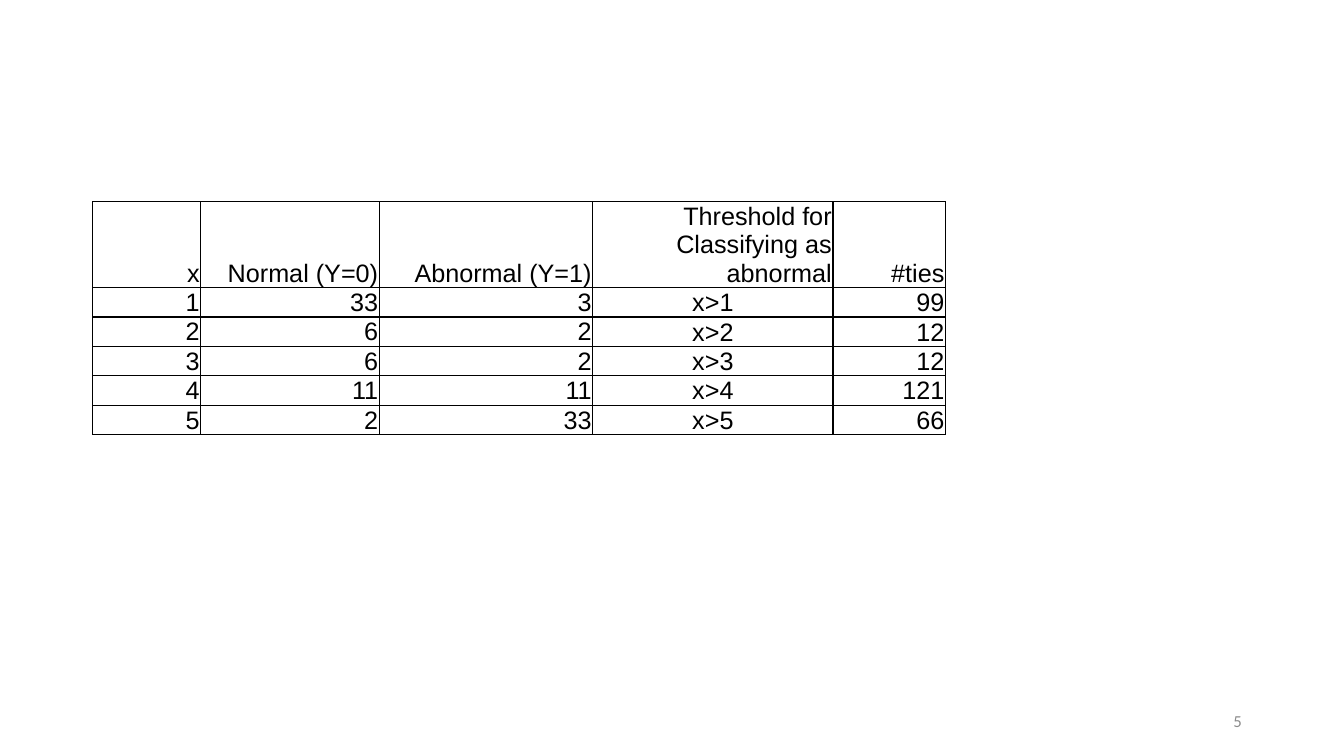
"""Build a slide with a table of ratings, class counts, thresholds and ties."""
from dataclasses import dataclass

from lxml import etree
from pptx import Presentation
from pptx.dml.color import RGBColor
from pptx.enum.text import MSO_ANCHOR, PP_ALIGN
from pptx.oxml.ns import qn
from pptx.slide import Slide
from pptx.table import _Cell
from pptx.text.text import _Paragraph
from pptx.util import Cm, Pt

BLACK = RGBColor(0x00, 0x00, 0x00)
GRAY = RGBColor(0x8C, 0x8C, 0x8C)
RIGHT, CENTER = PP_ALIGN.RIGHT, PP_ALIGN.CENTER
TOP, MIDDLE, BOTTOM = MSO_ANCHOR.TOP, MSO_ANCHOR.MIDDLE, MSO_ANCHOR.BOTTOM
HEADER_HEIGHT, ROW_HEIGHT, TABLE_HEIGHT = Cm(1.55), Cm(0.51), Cm(6.2)
BORDER_TAGS = ("a:lnL", "a:lnR", "a:lnT", "a:lnB")


@dataclass(frozen=True)
class Column:
    heading: str
    width: float
    alignment: PP_ALIGN = RIGHT
    anchor: MSO_ANCHOR = TOP


@dataclass(frozen=True)
class Rating:
    x: int
    normal: int
    abnormal: int

    def texts(self) -> list[str]:
        """Return the row's texts, with ties as the product of both counts."""
        ties = self.normal * self.abnormal
        return [str(self.x), str(self.normal), str(self.abnormal), f"x>{self.x}", str(ties)]


COLUMNS = [
    Column("x", 2.72),
    Column("Normal (Y=0)", 4.5),
    Column("Abnormal (Y=1)", 5.38),
    Column("Threshold for Classifying as abnormal", 6.05, CENTER, BOTTOM),
    Column("#ties", 2.84, RIGHT, BOTTOM),
]
RATINGS = [
    Rating(1, 33, 3),
    Rating(2, 6, 2),
    Rating(3, 6, 2),
    Rating(4, 11, 11),
    Rating(5, 2, 33),
]
CELL_FORMAT = {
    "margin_left": Cm(0.03),
    "margin_right": Cm(0.03),
    "margin_top": Cm(0.03),
    "margin_bottom": Cm(0),
}
TABLE_FORMAT = {"first_row": False, "horz_banding": False}
TABLE_FONT = {"name": "Arial", "size": Pt(18), "bold": False}
NUMBER_FONT = {"name": "Calibri", "size": Pt(12)}


def apply_format(target: object, values: dict) -> None:
    """Set each named attribute on the target."""
    for name, value in values.items():
        setattr(target, name, value)


def write_text(paragraph: _Paragraph, text: str, alignment: PP_ALIGN,
               font_format: dict, color: RGBColor) -> None:
    """Write one formatted run into a paragraph."""
    paragraph.alignment = alignment
    run = paragraph.add_run()
    run.text = text
    apply_format(run.font, font_format)
    run.font.color.rgb = color


def add_borders(cell: _Cell) -> None:
    """Draw a thin solid line on all four sides of a cell."""
    properties = cell._tc.get_or_add_tcPr()
    for position, tag in enumerate(BORDER_TAGS):
        line = etree.Element(qn(tag), w=str(Pt(1)))
        fill = etree.SubElement(line, qn("a:solidFill"))
        etree.SubElement(fill, qn("a:srgbClr"), val=str(BLACK))
        properties.insert(position, line)


def fill_cell(cell: _Cell, text: str, alignment: PP_ALIGN, anchor: MSO_ANCHOR) -> None:
    """Write and format one table cell."""
    apply_format(cell, CELL_FORMAT | {"vertical_anchor": anchor})
    cell.fill.background()
    add_borders(cell)
    write_text(cell.text_frame.paragraphs[0], text, alignment, TABLE_FONT, BLACK)


def add_ratings_table(slide: Slide) -> None:
    """Add the table with its heading row and one row per rating."""
    total_width = Cm(sum(column.width for column in COLUMNS))
    frame = slide.shapes.add_table(
        len(RATINGS) + 1, len(COLUMNS), Cm(2.34), Cm(5.08), total_width, TABLE_HEIGHT)
    table = frame.table
    apply_format(table, TABLE_FORMAT)
    for row_index, row in enumerate(table.rows):
        row.height = ROW_HEIGHT if row_index else HEADER_HEIGHT
    frame.height = TABLE_HEIGHT
    for column_index, column in enumerate(COLUMNS):
        table.columns[column_index].width = Cm(column.width)
        fill_cell(table.cell(0, column_index), column.heading, RIGHT, BOTTOM)
        for row_index, rating in enumerate(RATINGS, start=1):
            fill_cell(table.cell(row_index, column_index),
                      rating.texts()[column_index], column.alignment, column.anchor)


def add_slide_number(slide: Slide, number: str) -> None:
    """Add the slide number at the lower right."""
    text_box = slide.shapes.add_textbox(Cm(23.93), Cm(17.65), Cm(7.62), Cm(1.02))
    text_frame = text_box.text_frame
    apply_format(text_frame, {"word_wrap": True, "vertical_anchor": MIDDLE})
    write_text(text_frame.paragraphs[0], number, RIGHT, NUMBER_FONT, GRAY)


def main() -> None:
    """Build and save the presentation."""
    presentation = Presentation()
    presentation.slide_width, presentation.slide_height = Cm(33.87), Cm(19.05)
    slide = presentation.slides.add_slide(presentation.slide_layouts[6])
    add_ratings_table(slide)
    add_slide_number(slide, "5")
    presentation.save("out.pptx")


if __name__ == "__main__":
    main()
